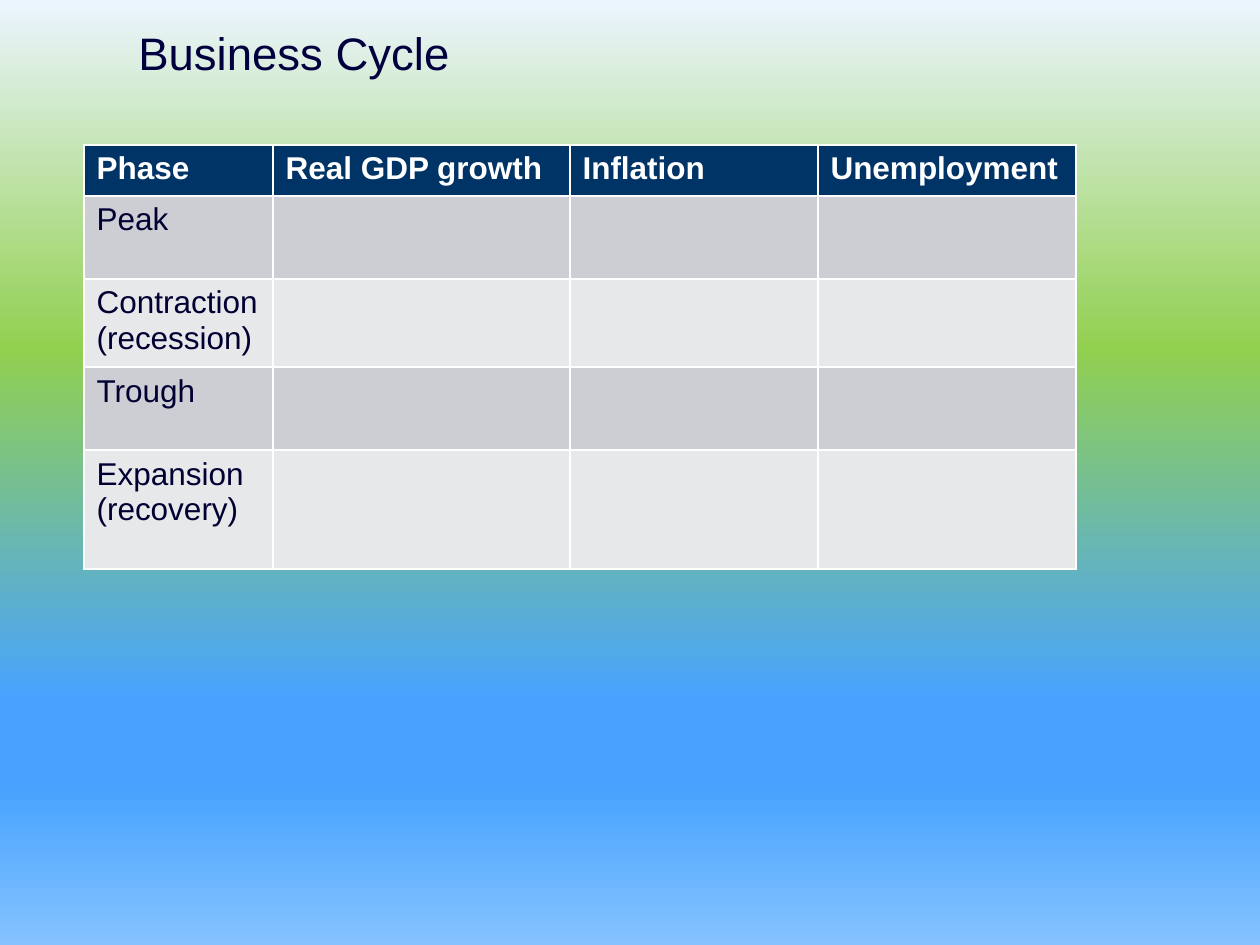
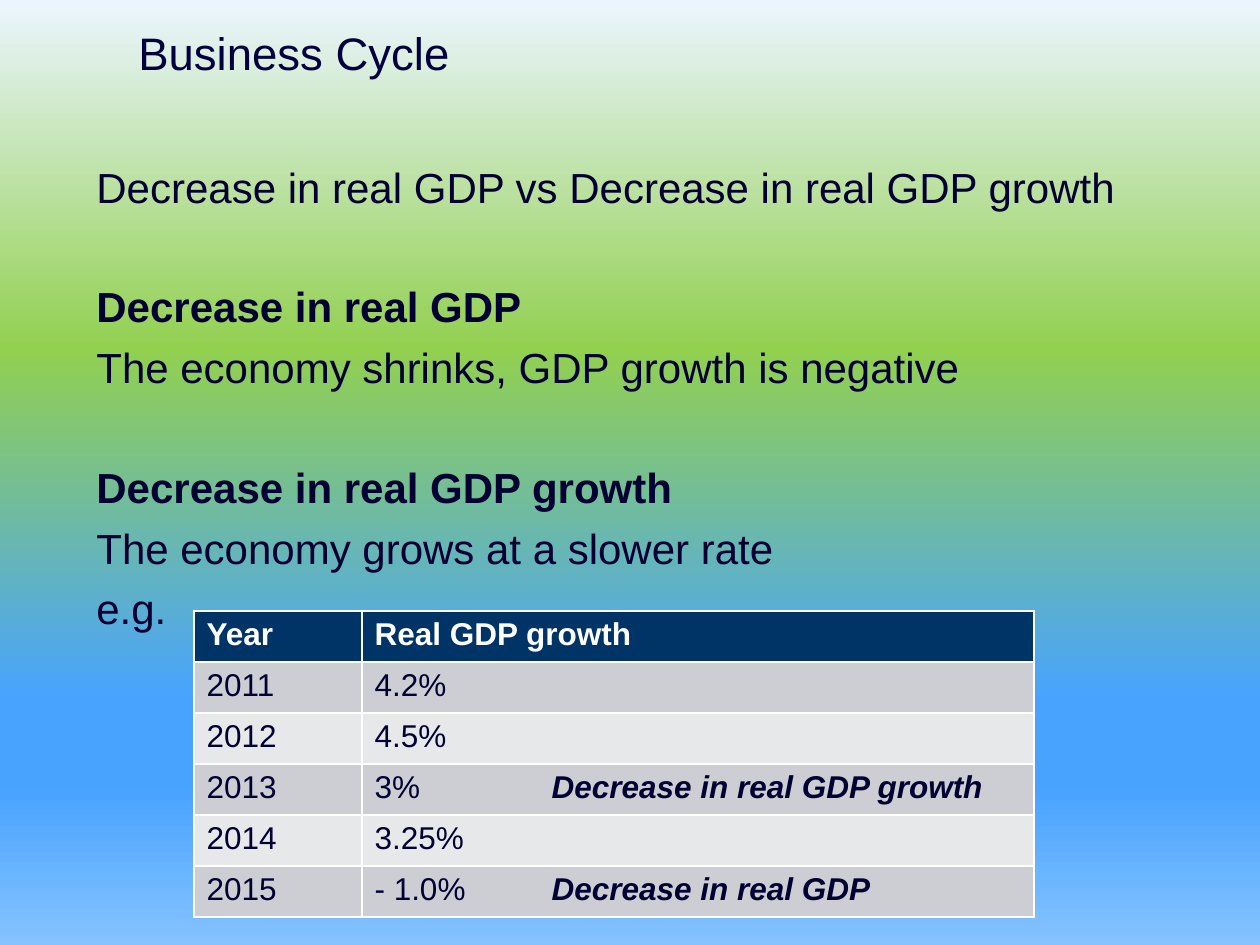
from copy import deepcopy

from lxml import etree
from pptx import Presentation, util as u
from pptx.dml.color import RGBColor
from pptx.enum import text
from pptx.oxml.ns import qn

EMU_PER_PX = 914400 / 126
PAGE_SIZE = (1260, 945)
TITLE_BOX = (126, 20, 1134, 64)
NAVY, INK, TITLE_INK, WHITE = "003366", "000032", "00003E", "FFFFFF"
BANDS = ("CCCED3", "E7E8EA")
SKY = ((0, "EBF5FF"), (0.37, "92D050"), (0.74, "47A3FF"), (0.83, "47A3FF"), (1, "85C2FF"))

BODY_FORMAT = {"name": "Arial", "size": u.Pt(24), "bold": False}
HEAD_FORMAT = {"name": "Arial", "size": u.Pt(18), "bold": True}
CELL_FORMAT = {"name": "Arial", "size": u.Pt(18), "bold": False}
REMARK_FORMAT = {**CELL_FORMAT, "bold": True, "italic": True}
LINE_GAP, SECTION_GAP = 6, 39.5
REMARK_TAB = 177
HEAD_ROW = 51


def px(length):
    return u.Emu(round(length * EMU_PER_PX))


def colour(hex_code):
    return RGBColor.from_string(hex_code)


def add_span(para, words, values, ink):
    span = para.add_run()
    span.text = words
    for name, value in values.items():
        setattr(span.font, name, value)
    span.font.color.rgb = colour(ink)


def add_text_frame(page, box):
    frame = page.shapes.add_textbox(*map(px, box)).text_frame
    frame.word_wrap = True
    return frame


def paint_background(master):
    """Give every slide the vertical sky gradient."""
    fill = master.background.fill
    fill.gradient()
    fill.gradient_angle = 270
    stops = master.element.find(".//" + qn("a:gsLst"))
    while len(stops) < len(SKY):
        stops.append(deepcopy(stops[0]))
    for stop, (position, hex_code) in zip(fill.gradient_stops, SKY):
        stop.position = position
        stop.color.rgb = colour(hex_code)


def add_page(deck, title):
    page = deck.slides.add_slide(deck.slide_layouts[6])
    frame = add_text_frame(page, TITLE_BOX)
    frame.vertical_anchor = text.MSO_ANCHOR.MIDDLE
    add_span(frame.paragraphs[0], title, {"name": "Arial", "size": u.Pt(26)}, TITLE_INK)
    return page


def add_tab_stop(para, position):
    tabs = etree.SubElement(para._p.get_or_add_pPr(), qn("a:tabLst"))
    etree.SubElement(tabs, qn("a:tab"), pos=str(px(position)), algn="l")


def fill_cell(cell, words, values, ink, fill):
    """Write one paragraph per line; words after a tab are an emphasised remark."""
    cell.fill.solid()
    cell.fill.fore_color.rgb = colour(fill)
    frame = cell.text_frame
    for index, line in enumerate(words.split("\n")):
        para = frame.add_paragraph() if index else frame.paragraphs[0]
        value, tab, remark = line.partition("\t")
        if tab:
            add_tab_stop(para, REMARK_TAB)
        add_span(para, value + tab, values, ink)
        if remark:
            add_span(para, remark, REMARK_FORMAT, ink)


def add_grid(page, corner, widths, heights, rows):
    """Add a table with a navy header and banded rows at the given corner."""
    size = (sum(widths), sum(heights))
    table = page.shapes.add_table(len(rows), len(widths), *map(px, corner + size)).table
    for column, width in zip(table.columns, widths):
        column.width = px(width)
    for r, (row, height) in enumerate(zip(rows, heights)):
        table.rows[r].height = px(height)
        if r == 0:
            style = (HEAD_FORMAT, WHITE, NAVY)
        else:
            style = (CELL_FORMAT, INK, BANDS[(r - 1) % 2])
        for c in range(len(widths)):
            fill_cell(table.cell(r, c), row[c] if c < len(row) else "", *style)


def add_sections(page, box, sections):
    """Stack sections of (heading, lines) with a wider gap before each heading."""
    frame = add_text_frame(page, box)
    para = frame.paragraphs[0]
    for number, (heading, lines) in enumerate(sections):
        for index, line in enumerate((heading, *lines)):
            if number or index:
                para = frame.add_paragraph()
                para.space_before = u.Pt(LINE_GAP if index else SECTION_GAP)
            bold = number > 0 and index == 0
            add_span(para, line, {**BODY_FORMAT, "bold": bold}, INK)


def add_phase_page(deck):
    page = add_page(deck, "Business Cycle")
    add_grid(page, (84, 145), (189, 297, 248, 258), (HEAD_ROW, 83, 83, 83, 119), [
        ("Phase", "Real GDP growth", "Inflation", "Unemployment"),
        ("Peak",),
        ("Contraction\n(recession)",),
        ("Trough",),
        ("Expansion\n(recovery)",),
    ])


def add_growth_page(deck):
    page = add_page(deck, "Business Cycle")
    add_sections(page, (84, 155, 1113, 624), [
        ("Decrease in real GDP vs Decrease in real GDP growth", ()),
        ("Decrease in real GDP", ("The economy shrinks, GDP growth is negative",)),
        ("Decrease in real GDP growth", ("The economy grows at a slower rate", "e.g.")),
    ])
    rows = [
        ("Year", "Real GDP growth"),
        ("2011", "4.2%"),
        ("2012", "4.5%"),
        ("2013", "3%\tDecrease in real GDP growth"),
        ("2014", "3.25%"),
        ("2015", "- 1.0%\tDecrease in real GDP"),
    ]
    add_grid(page, (194, 611), (168, 672), (HEAD_ROW,) * len(rows), rows)


def main():
    deck = Presentation()
    deck.slide_width, deck.slide_height = map(px, PAGE_SIZE)
    paint_background(deck.slide_master)
    add_phase_page(deck)
    add_growth_page(deck)
    deck.save("out.pptx")


if __name__ == "__main__":
    main()
